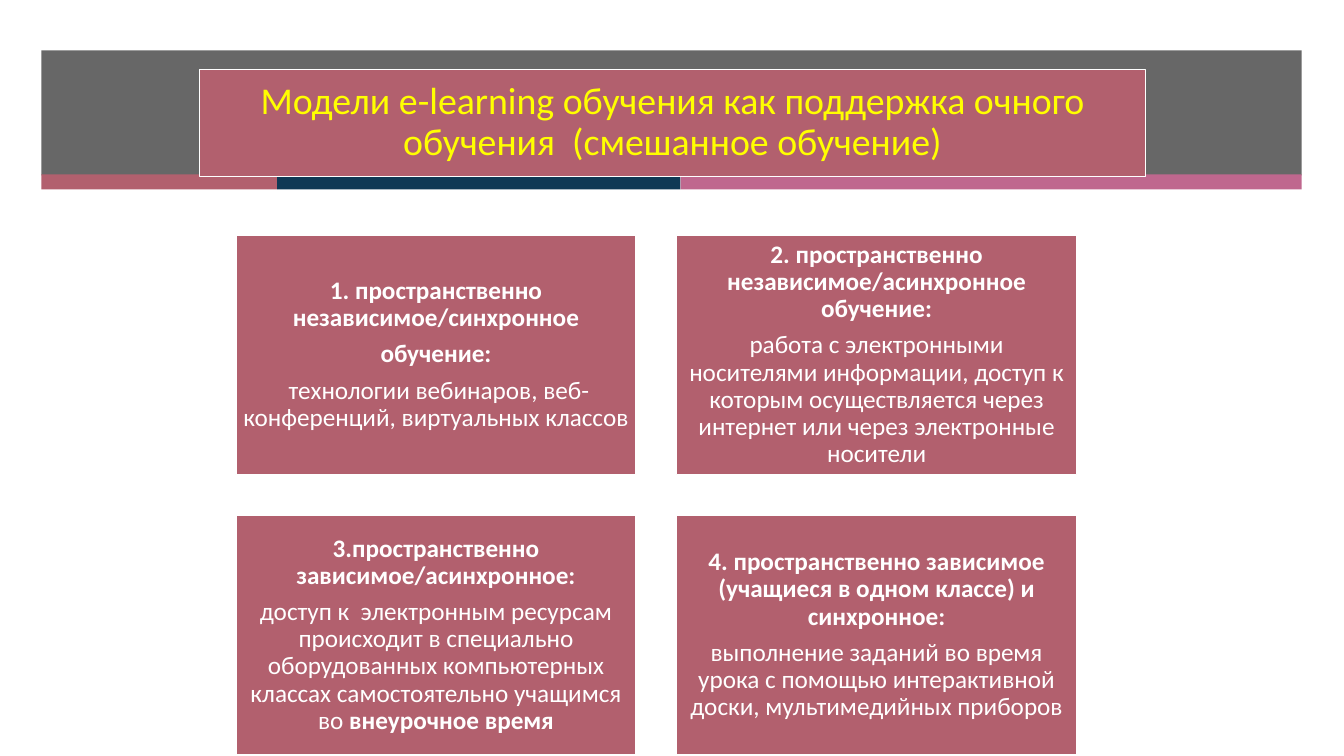
from pptx import Presentation
from pptx.dml.color import RGBColor
from pptx.enum import shapes, text
from pptx.util import Inches, Pt

ROSE = RGBColor(0xB2, 0x60, 0x6E)
NAVY = RGBColor(0x0F, 0x39, 0x55)
PINK = RGBColor(0xBF, 0x67, 0x8E)
GRAY = RGBColor(0x67, 0x67, 0x67)
WHITE = RGBColor(0xFF, 0xFF, 0xFF)
YELLOW = RGBColor(0xFF, 0xFF, 0x00)

TITLE = "Модели e-learning обучения как поддержка очного обучения  (смешанное обучение)"
MODELS = [
    [[("1. пространственно независимое/синхронное", True)],
     [("обучение:", True)],
     [(" ", True), ("технологии вебинаров, веб-конференций, виртуальных классов", False)]],
    [[("2. пространственно независимое/асинхронное обучение:", True)],
     [("работа с электронными носителями информации, доступ к которым "
       "осуществляется через интернет или через электронные носители", False)]],
    [[("3.пространственно зависимое/асинхронное:", True)],
     [("доступ к  электронным ресурсам происходит в специально оборудованных "
       "компьютерных классах самостоятельно учащимся во ", False),
      ("внеурочное время", True)]],
    [[("4. пространственно зависимое (учащиеся в одном классе) и синхронное:", True)],
     [("выполнение заданий во время урока с помощью интерактивной доски, "
       "мультимедийных приборов", False)]],
]
STRIPES = [(2.34, ROSE), (4, NAVY), (6.16, PINK)]
BAND_LEFT, BAND_TOP, BAND_WIDTH, BAND_HEIGHT = 0.41, 0.5, 12.5, 1.24
STRIPE_TOP, STRIPE_HEIGHT = 1.73, 0.15
CARD_LEFT, CARD_TOP, CARD_WIDTH, CARD_HEIGHT, GAP = 2.34, 2.33, 3.97, 2.38, 0.4
COLUMNS = 2


def add_box(page, left, top, width, height, color):
    """Add a plain filled rectangle."""
    box = page.shapes.add_shape(
        shapes.MSO_SHAPE.RECTANGLE,
        Inches(left), Inches(top), Inches(width), Inches(height))
    box.shadow.inherit = False
    box.fill.solid()
    box.fill.fore_color.rgb = color
    box.line.fill.background()
    return box


def add_outline(box):
    """Give a box the thin white outline."""
    box.line.color.rgb = WHITE
    box.line.width = Pt(1)


def write_text(box, paragraphs, size, color, inset):
    """Write centred paragraphs of (text, bold) spans into a box."""
    frame = box.text_frame
    frame.word_wrap = True
    frame.auto_size = text.MSO_AUTO_SIZE.NONE
    frame.vertical_anchor = text.MSO_ANCHOR.MIDDLE
    frame.margin_left = frame.margin_right = Inches(inset)
    frame.margin_top = frame.margin_bottom = Inches(inset)
    for index, spans in enumerate(paragraphs):
        para = frame.add_paragraph() if index else frame.paragraphs[0]
        para.alignment = text.PP_ALIGN.CENTER
        para.line_spacing = 0.9
        para.space_before = Pt(0)
        para.space_after = Pt(0.35 * size)
        for words, bold in spans:
            span = para.add_run()
            span.text = words
            span.font.name = "Calibri"
            span.font.size = Pt(size)
            span.font.bold = bold
            span.font.color.rgb = color


def main():
    """Build the slide and save it."""
    deck = Presentation()
    deck.slide_width, deck.slide_height = Inches(13.33), Inches(7.5)
    page = deck.slides.add_slide(deck.slide_layouts[5])

    add_box(page, BAND_LEFT, BAND_TOP, BAND_WIDTH, BAND_HEIGHT, GRAY)
    left = BAND_LEFT
    for width, color in STRIPES:
        add_box(page, left, STRIPE_TOP, width, STRIPE_HEIGHT, color)
        left += width

    title = page.shapes.title
    page.shapes._spTree.append(title._element)
    title.left, title.top = Inches(1.98), Inches(0.69)
    title.width, title.height = Inches(9.38), Inches(1.06)
    title.fill.solid()
    title.fill.fore_color.rgb = ROSE
    add_outline(title)
    write_text(title, [[(TITLE, False)]], 27, YELLOW, 0.11)

    for index, paragraphs in enumerate(MODELS):
        row, column = divmod(index, COLUMNS)
        card = add_box(page, CARD_LEFT + column * (CARD_WIDTH + GAP),
                       CARD_TOP + row * (CARD_HEIGHT + GAP),
                       CARD_WIDTH, CARD_HEIGHT, ROSE)
        add_outline(card)
        write_text(card, paragraphs, 18, WHITE, 0.07)

    deck.save("out.pptx")


if __name__ == "__main__":
    main()
